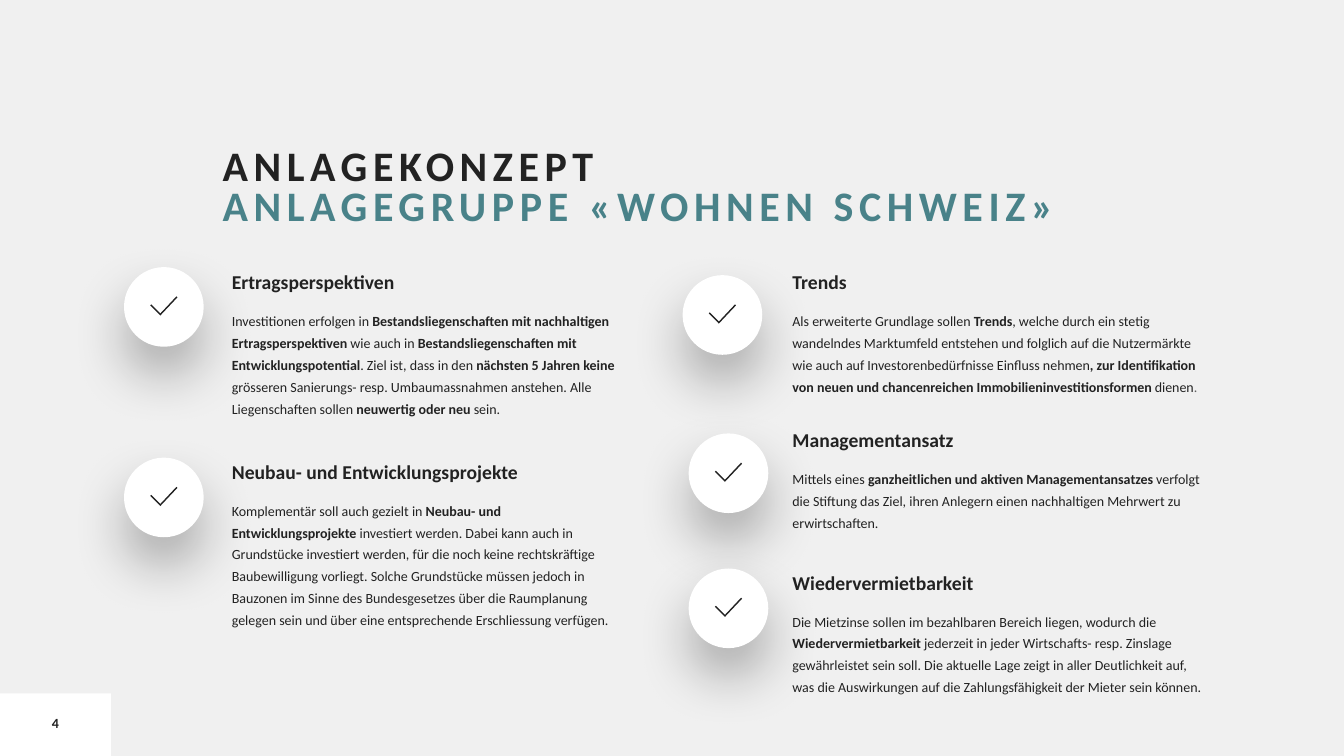
from pptx import Presentation
from pptx.dml.color import RGBColor
from pptx.enum.shapes import MSO_SHAPE
from pptx.enum.text import MSO_ANCHOR, MSO_AUTO_SIZE, PP_ALIGN
from pptx.oxml import parse_xml
from pptx.oxml.ns import nsdecls
from pptx.util import Pt

RECT, OVAL = MSO_SHAPE.RECTANGLE, MSO_SHAPE.OVAL
MIDDLE, CENTER = MSO_ANCHOR.MIDDLE, PP_ALIGN.CENTER
GROW = MSO_AUTO_SIZE.SHAPE_TO_FIT_TEXT

PX = 9144  # EMU, 100 px to the inch

THEME = {
    "font": "Calibri",
    "back": RGBColor.from_string("F0F0F0"),
    "white": RGBColor.from_string("FFFFFF"),
    "ink": RGBColor.from_string("222222"),
    "teal": RGBColor.from_string("498289"),
    "gray": RGBColor.from_string("606060"),
    "title": Pt(30),
    "head": Pt(14),
    "body": Pt(10),
}

SHADOW = (
    f'<a:effectLst {nsdecls("a")}>'
    f'<a:outerShdw blurRad="{Pt(40)}" dist="{Pt(20)}" dir="5400000" algn="t" rotWithShape="0">'
    '<a:srgbClr val="000000"><a:alpha val="30000"/></a:srgbClr>'
    '</a:outerShdw></a:effectLst>'
)

# Outline of the tick, measured from the corner of its disc
TICK = [(53, 30), (36, 48), (26, 38), (27, 37), (36, 46), (52, 29)]
DISC = 79

# Text left, top, width, height; disc left, top; heading; runs, every second one bold
CARDS = [
    ((230, 257, 407, 196), (123, 265), "Ertragsperspektiven", [
        "Investitionen erfolgen in ",
        "Bestandsliegenschaften mit nachhaltigen Ertragsperspektiven ",
        "wie auch in ",
        "Bestandsliegenschaften mit Entwicklungspotential",
        ". Ziel ist, dass in den ",
        "nächsten 5 Jahren keine ",
        "grösseren Sanierungs- resp. Umbaumassnahmen anstehen. "
        "Alle Liegenschaften sollen ",
        "neuwertig oder neu",
        " sein.",
    ]),
    ((230, 445, 407, 182), (123, 454), "Neubau- und Entwicklungsprojekte", [
        "Komplementär soll auch gezielt in ",
        "Neubau- und Entwicklungsprojekte ",
        "investiert werden. Dabei kann auch in Grundstücke investiert werden, "
        "für die noch keine rechtskräftige Baubewilligung vorliegt. Solche "
        "Grundstücke müssen jedoch in Bauzonen im Sinne des Bundesgesetzes über "
        "die Raumplanung gelegen sein und über eine entsprechende Erschliessung "
        "verfügen.",
    ]),
    ((786, 257, 437, 138), (677, 273), "Trends", [
        "Als erweiterte Grundlage sollen ",
        "Trends",
        ", welche durch ein stetig wandelndes Marktumfeld entstehen und folglich "
        "auf die Nutzermärkte wie auch auf Investorenbedürfnisse Einfluss nehmen",
        ", zur Identifikation von neuen und chancenreichen "
        "Immobilieninvestitionsformen",
        " dienen",
    ]),
    ((786, 414, 437, 116), (683, 430), "Managementansatz", [
        "Mittels eines ",
        "ganzheitlichen und aktiven Managementansatzes ",
        "verfolgt die Stiftung das Ziel, ihren Anlegern einen nachhaltigen "
        "Mehrwert zu erwirtschaften.",
    ]),
    ((786, 555, 437, 174), (683, 564), "Wiedervermietbarkeit", [
        "Die Mietzinse sollen im bezahlbaren Bereich liegen, wodurch die ",
        "Wiedervermietbarkeit",
        " jederzeit in jeder Wirtschafts- resp. Zinslage gewährleistet sein soll. "
        "Die aktuelle Lage zeigt in aller Deutlichkeit auf, was die Auswirkungen "
        "auf die Zahlungsfähigkeit der Mieter sein können.",
    ]),
]


def add_text(left, top, width, height):
    box = slide.shapes.add_textbox(left * PX, top * PX, width * PX, height * PX)
    box.text_frame.word_wrap = True
    return box.text_frame


def set_font(font, size, bold=None):
    font.name = THEME["font"]
    font.size = size
    font.bold = bold
    font.color.rgb = THEME["ink"]


deck = Presentation()
deck.slide_width, deck.slide_height = 1333 * PX, 750 * PX
slide = deck.slides.add_slide(deck.slide_layouts[6])
slide.background.fill.solid()
slide.background.fill.fore_color.rgb = THEME["back"]

# Page number
plate = slide.shapes.add_shape(RECT, 0, 688 * PX, 110 * PX, 62 * PX)
plate.shadow.inherit = False
plate.fill.solid()
plate.fill.fore_color.rgb = THEME["white"]
plate.line.fill.background()
frame = add_text(0, 697, 110, 40)
frame.vertical_anchor = MIDDLE
para = frame.paragraphs[0]
para.text = "4"
para.alignment = CENTER
set_font(para.font, THEME["body"], True)

# Title
para = add_text(211, 143, 1001, 75).paragraphs[0]
para.line_spacing = 0.8
set_font(para.font, THEME["title"], True)
first = para.add_run()
first.text = "ANLAGEKONZEPT"
para.add_line_break()
second = para.add_run()
second.text = "ANLAGEGRUPPE «WOHNEN SCHWEIZ»"
second.font.color.rgb = THEME["teal"]
for run in (first, second):
    run.font.size = THEME["title"]
    run._r.get_or_add_rPr().set("spc", "400")

# Cards
for place, (left, top), title, parts in CARDS:
    frame = add_text(*place)
    frame.auto_size = GROW
    frame.margin_left, frame.margin_right = 0, 24 * PX
    frame.margin_top = frame.margin_bottom = 4 * PX
    head = frame.paragraphs[0]
    head.text = title
    head.line_spacing = 1.3
    set_font(head.font, THEME["head"], True)
    body = frame.add_paragraph()
    body.line_spacing = 1.3
    body.space_before = Pt(10)
    set_font(body.font, THEME["body"])
    for i, part in enumerate(parts):
        run = body.add_run()
        run.text = part
        run.font.bold = i % 2 == 1
    if title == "Trends":
        stop = body.add_run()
        stop.text = "."
        stop.font.color.rgb = THEME["gray"]

    group = slide.shapes.add_group_shape()
    disc = group.shapes.add_shape(OVAL, left * PX, top * PX, DISC * PX, DISC * PX)
    disc.fill.solid()
    disc.fill.fore_color.rgb = THEME["white"]
    disc.line.fill.background()
    disc._element.spPr.append(parse_xml(SHADOW))
    (x, y), *rest = [(left + dx, top + dy) for dx, dy in TICK]
    pen = group.shapes.build_freeform(x, y, scale=PX)
    pen.add_line_segments(rest)
    tick = pen.convert_to_shape()
    tick.shadow.inherit = False
    tick.fill.solid()
    tick.fill.fore_color.rgb = THEME["ink"]
    tick.line.fill.background()

deck.save("out.pptx")
